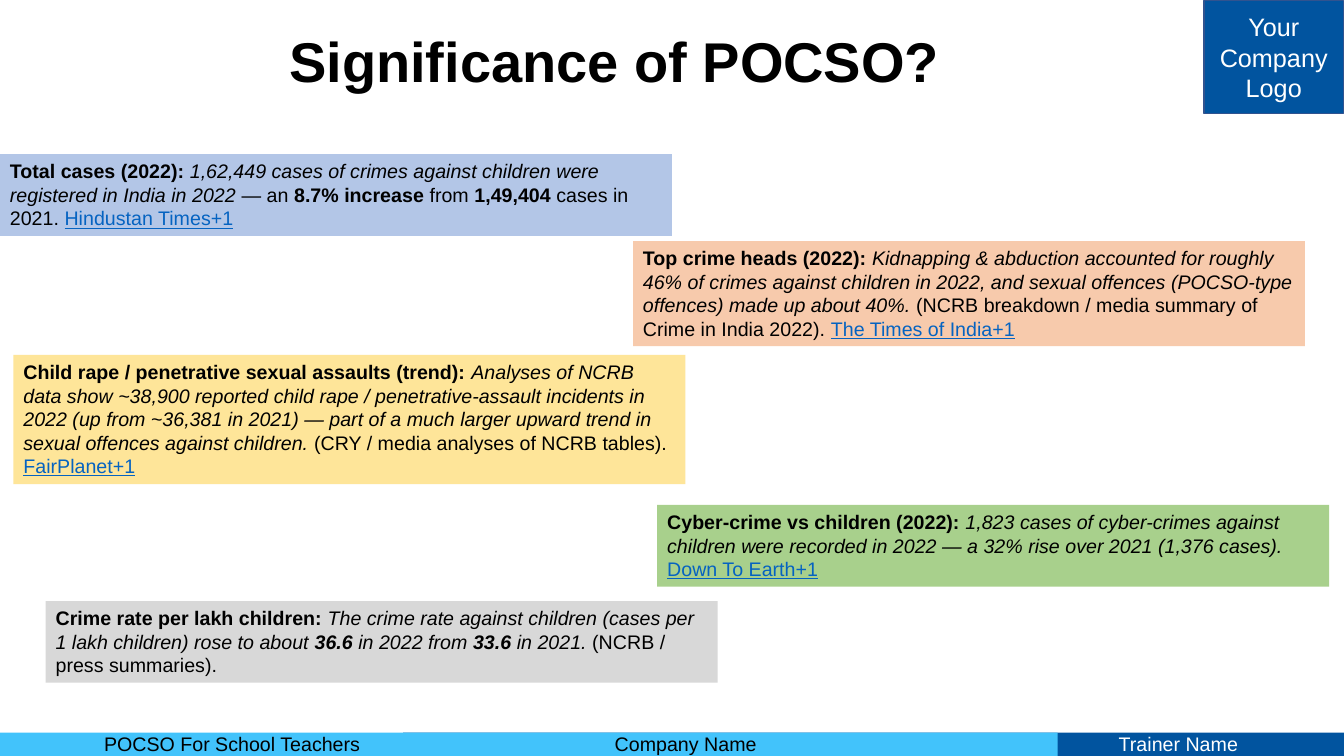
import pptx
import pptx.util
import pptx.dml.color
import pptx.enum.shapes
import pptx.enum.text

RGBColor = pptx.dml.color.RGBColor
ALIGN = pptx.enum.text.PP_ALIGN
ANCHOR = pptx.enum.text.MSO_ANCHOR
AUTO_SIZE = pptx.enum.text.MSO_AUTO_SIZE

BLACK = RGBColor(0x00, 0x00, 0x00)
WHITE = RGBColor(0xFF, 0xFF, 0xFF)
NAVY = RGBColor(0x01, 0x54, 0x9F)
NAVY_EDGE = RGBColor(0x31, 0x53, 0x8F)
SKY = RGBColor(0x42, 0xC3, 0xFB)
LINK = RGBColor(0x05, 0x63, 0xC1)
PERIWINKLE = RGBColor(0xB3, 0xC6, 0xE7)
PEACH = RGBColor(0xF7, 0xCA, 0xAC)
YELLOW = RGBColor(0xFE, 0xE5, 0x99)
GREEN = RGBColor(0xA8, 0xD0, 0x8C)
GREY = RGBColor(0xD8, 0xD8, 0xD8)

SLIDE_WIDTH = pptx.util.Inches(13.33)
SLIDE_HEIGHT = pptx.util.Inches(7.5)
COLUMN = SLIDE_WIDTH / 100
ROW = SLIDE_HEIGHT / 100
CARD_WIDTH = 50

CARDS = [
    (0, 20.4, 10.8, PERIWINKLE, [
        ("Total cases (2022): ", "bold"),
        ("1,62,449 cases of crimes against children were registered in India in 2022", "italic"),
        (" — an ", ""),
        ("8.7% increase", "bold"),
        (" from ", ""),
        ("1,49,404", "bold"),
        (" cases in 2021. ", ""),
        ("Hindustan Times+1", "link")]),
    (47.1, 31.9, 13.9, PEACH, [
        ("Top crime heads (2022): ", "bold"),
        ("Kidnapping & abduction accounted for roughly 46% of crimes against children in 2022, "
         "and sexual offences (POCSO-type offences) made up about 40%.", "italic"),
        (" (NCRB breakdown / media summary of Crime in India 2022). ", ""),
        ("The Times of India+1", "link")]),
    (1, 46.95, 17.1, YELLOW, [
        ("Child rape / penetrative sexual assaults (trend): ", "bold"),
        ("Analyses of NCRB data show ~38,900 reported child rape / penetrative-assault incidents "
         "in 2022 (up from ~36,381 in 2021) — part of a much larger upward trend in sexual "
         "offences against children.", "italic"),
        (" (CRY / media analyses of NCRB tables). ", ""),
        ("FairPlanet+1", "link")]),
    (48.9, 66.8, 10.8, GREEN, [
        ("Cyber-crime vs children (2022): ", "bold"),
        ("1,823 cases of cyber-crimes against children were recorded in 2022 — a 32% rise "
         "over 2021 (1,376 cases). ", "italic"),
        ("Down To Earth+1", "link")]),
    (3.4, 79.5, 10.8, GREY, [
        ("Crime rate per lakh children: ", "bold"),
        ("The crime rate against children (cases per 1 lakh children) rose to about ", "italic"),
        ("36.6", "bold italic"),
        (" in 2022 from ", "italic"),
        ("33.6", "bold italic"),
        (" in 2021.", "italic"),
        (" (NCRB / press summaries).", "")]),
]


def place(left, top, width, height):
    return (round(left * COLUMN), round(top * ROW),
            round(width * COLUMN), round(height * ROW))


def write_text(shape, paragraphs, size=14, color=BLACK, align=ALIGN.LEFT,
               anchor=ANCHOR.TOP, auto_size=AUTO_SIZE.NONE, line_spacing=None, side_inset=0.1):
    frame = shape.text_frame
    frame.word_wrap = True
    frame.auto_size = auto_size
    frame.vertical_anchor = anchor
    frame.margin_left = frame.margin_right = pptx.util.Inches(side_inset)
    frame.margin_top = frame.margin_bottom = pptx.util.Inches(0.05)
    for index, runs in enumerate(paragraphs):
        paragraph = frame.add_paragraph() if index else frame.paragraphs[0]
        paragraph.alignment = align
        paragraph.line_spacing = line_spacing
        for text, style in runs:
            run = paragraph.add_run()
            run.text = text
            run.font.name = "Arial"
            run.font.size = pptx.util.Pt(size)
            run.font.bold = "bold" in style
            run.font.italic = "italic" in style
            run.font.underline = "link" in style
            run.font.color.rgb = LINK if "link" in style else color


def add_block(slide, box, fill, edge=None):
    block = slide.shapes.add_shape(pptx.enum.shapes.MSO_SHAPE.RECTANGLE, *place(*box))
    block.shadow.inherit = False
    block.fill.solid()
    block.fill.fore_color.rgb = fill
    if edge is None:
        block.line.fill.background()
    else:
        block.line.color.rgb = edge
        block.line.width = pptx.util.Pt(1)
    return block


def add_title(slide, box):
    title = slide.shapes.title
    title.left, title.top, title.width, title.height = place(*box)
    write_text(title, [[("Significance of POCSO?", "bold")]], size=40, align=ALIGN.CENTER,
               anchor=ANCHOR.MIDDLE, line_spacing=0.9, side_inset=0.09)


def add_logo_box(slide, box):
    logo_box = add_block(slide, box, NAVY, NAVY_EDGE)
    lines = [[(word, "")] for word in ("Your", "Company", "Logo")]
    write_text(logo_box, lines, size=18, color=WHITE, align=ALIGN.CENTER, anchor=ANCHOR.MIDDLE)


def add_footer(slide, box):
    left, top, width, height = box
    add_block(slide, (left + 0.3 * width, top, 0.7 * width, height), NAVY)
    add_block(slide, (left, top, 0.787 * width, height), SKY)
    labels = [("POCSO For School Teachers", 0.07, 0.29, BLACK),
              ("Company Name", 0.45, 0.18, BLACK),
              ("Trainer Name", 0.825, 0.17, WHITE)]
    for text, start, share, color in labels:
        label_box = place(left + start * width, top - 0.7, share * width, 4.5)
        label = slide.shapes.add_textbox(*label_box)
        write_text(label, [[(text, "")]], color=color, auto_size=AUTO_SIZE.SHAPE_TO_FIT_TEXT)


def add_card(slide, box, fill, runs):
    card = add_block(slide, box, fill)
    write_text(card, [runs], auto_size=AUTO_SIZE.SHAPE_TO_FIT_TEXT)


def main():
    presentation = pptx.Presentation()
    presentation.slide_width = SLIDE_WIDTH
    presentation.slide_height = SLIDE_HEIGHT
    slide = presentation.slides.add_slide(presentation.slide_layouts.get_by_name("Title Only"))
    add_footer(slide, (0, 96.9, 100, 3.1))
    add_logo_box(slide, (89.6, 0.1, 10.35, 14.9))
    add_title(slide, (20.7, 3.1, 50, 10.7))
    for left, top, height, fill, runs in CARDS:
        add_card(slide, (left, top, CARD_WIDTH, height), fill, runs)
    presentation.save("out.pptx")


if __name__ == "__main__":
    main()
